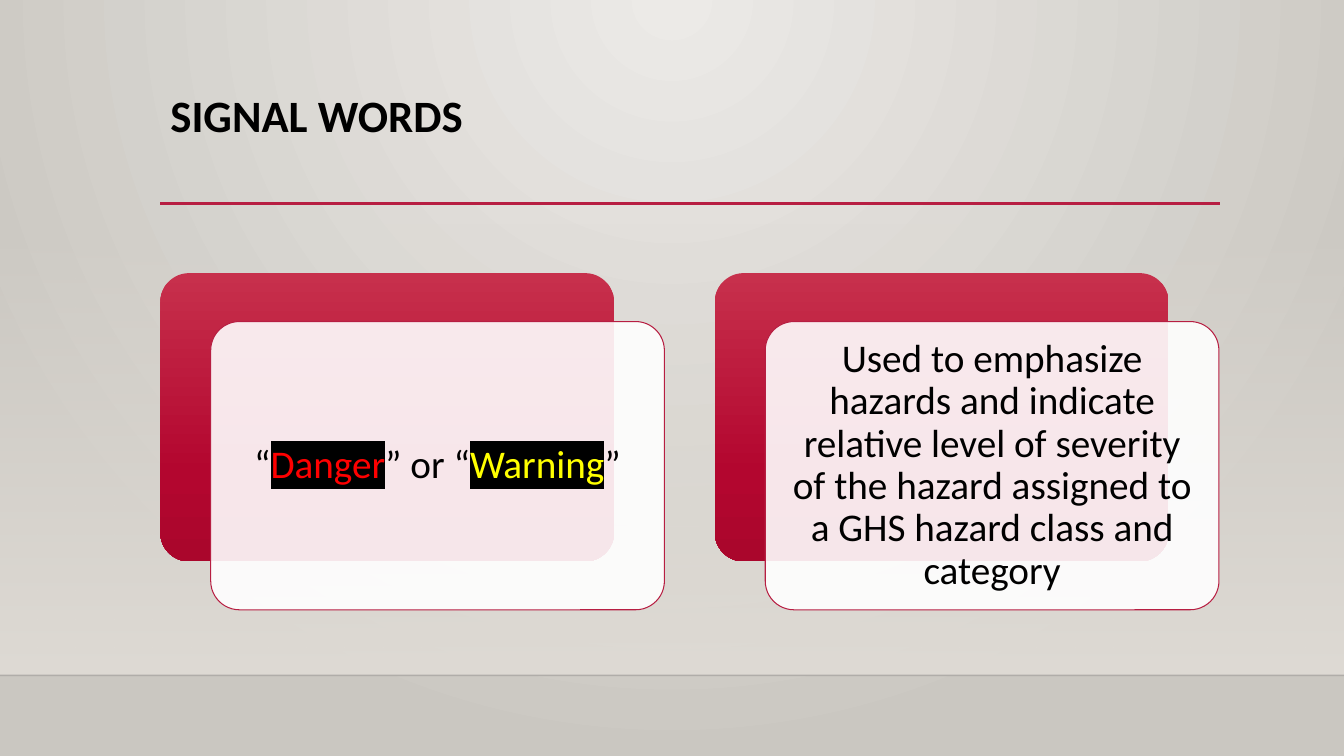
from dataclasses import dataclass

from lxml import etree
from pptx import Presentation
from pptx.dml.color import RGBColor
from pptx.enum import shapes, text
from pptx.oxml import parse_xml
from pptx.oxml.ns import nsdecls, qn
from pptx.util import Inches, Pt


@dataclass(frozen=True)
class Theme:
    font: str = "Calibri"
    title_size: int = 32
    body_size: int = 28
    ink: str = "000000"
    danger: str = "FF0000"
    warning: str = "FFFF00"
    accent: str = "B71E42"
    panel: str = "FFFFFF"
    horizon: str = "000001"
    backdrop: tuple = ((0, "ECEAE7", 100), (100, "CAC7C1", 100))
    wall: tuple = ((0, "DFDBD5", 0), (100, "DFDBD5", 100))
    card: tuple = ((0, "C7304C", 100), (69, "B3062F", 100), (100, "AA062C", 100))


THEME = Theme()

TITLE = [("SIGNAL WORDS", THEME.ink, None)]
CARDS = [
    [
        ("“", THEME.ink, None),
        ("Danger", THEME.danger, THEME.ink),
        ("” or “", THEME.ink, None),
        ("Warning", THEME.warning, THEME.ink),
        ("”", THEME.ink, None),
    ],
    [
        (
            "Used to emphasize hazards and indicate relative level of severity "
            "of the hazard assigned to a GHS hazard class and category",
            THEME.ink,
            None,
        )
    ],
]

WIDTH, HEIGHT = 13.33, 7.5
LEFT, RIGHT = 1.59, 12.1
RULE_Y, HORIZON_Y, WALL_TOP = 2.02, 6.7, 2.21
CARD_TOP, CARD_WIDTH, CARD_HEIGHT = 2.71, 4.5, 2.86
CARD_STEP, PANEL_DX, PANEL_DY = 5.5, 0.5, 0.48
CORNER = 0.1

LINEAR = '<a:lin ang="5400000" scaled="0"/>'
RADIAL = (
    '<a:path path="circle">'
    '<a:fillToRect l="43000" t="0" r="43000" b="100000"/></a:path>'
)


def set_alpha(color, percent):
    etree.SubElement(color, qn("a:alpha")).set("val", str(percent * 1000))


def set_gradient(fill, owner, stops, direction=LINEAR):
    fill.gradient()
    gradient = parse_xml(
        f'<a:gradFill {nsdecls("a")} rotWithShape="1"><a:gsLst>'
        + "".join(
            f'<a:gs pos="{pos * 1000}"><a:srgbClr val="{color}">'
            f'<a:alpha val="{alpha * 1000}"/></a:srgbClr></a:gs>'
            for pos, color, alpha in stops
        )
        + f"</a:gsLst>{direction}</a:gradFill>"
    )
    default = next(owner.iter(qn("a:gradFill")))
    default.getparent().replace(default, gradient)


def write(frame, runs, size, bold=False, align=text.PP_ALIGN.LEFT,
          anchor=text.MSO_ANCHOR.TOP, margins=(0.1, 0.05)):
    frame.word_wrap = True
    frame.auto_size = text.MSO_AUTO_SIZE.NONE
    frame.vertical_anchor = anchor
    frame.margin_left = frame.margin_right = Inches(margins[0])
    frame.margin_top = frame.margin_bottom = Inches(margins[1])
    paragraph = frame.paragraphs[0]
    paragraph.alignment = align
    paragraph.line_spacing = 0.9
    for words, color, highlight in runs:
        run = paragraph.add_run()
        run.text = words
        run.font.name = THEME.font
        run.font.size = Pt(size)
        run.font.bold = bold
        run.font.color.rgb = RGBColor.from_string(color)
        if highlight:
            mark = parse_xml(
                f'<a:highlight {nsdecls("a")}>'
                f'<a:srgbClr val="{highlight}"/></a:highlight>'
            )
            next(run.font.fill._xPr.iter(qn("a:solidFill"))).addnext(mark)


def add_block(slide, kind, left, top, width, height):
    block = slide.shapes.add_shape(
        kind, Inches(left), Inches(top), Inches(width), Inches(height)
    )
    block.shadow.inherit = False
    block.line.fill.background()
    if kind == shapes.MSO_SHAPE.ROUNDED_RECTANGLE:
        block.adjustments[0] = CORNER
    return block


def add_rule(slide, start, end, y, color, weight, alpha=100):
    rule = slide.shapes.add_connector(
        shapes.MSO_CONNECTOR.STRAIGHT, Inches(start), Inches(y), Inches(end), Inches(y)
    )
    rule.line.color.rgb = RGBColor.from_string(color)
    rule.line.width = Pt(weight)
    properties = rule.element.spPr
    set_alpha(next(properties.iter(qn("a:srgbClr"))), alpha)
    etree.SubElement(properties, qn("a:effectLst"))


def add_card(slide, left, runs):
    rounded = shapes.MSO_SHAPE.ROUNDED_RECTANGLE
    back = add_block(slide, rounded, left, CARD_TOP, CARD_WIDTH, CARD_HEIGHT)
    set_gradient(back.fill, back.element.spPr, THEME.card)
    panel = add_block(slide, rounded, left + PANEL_DX, CARD_TOP + PANEL_DY,
                      CARD_WIDTH, CARD_HEIGHT)
    panel.fill.solid()
    panel.fill.fore_color.rgb = RGBColor.from_string(THEME.panel)
    set_alpha(next(panel.element.spPr.iter(qn("a:srgbClr"))), 90)
    panel.line.color.rgb = RGBColor.from_string(THEME.accent)
    panel.line.width = Pt(0.75)
    write(panel.text_frame, runs, THEME.body_size, align=text.PP_ALIGN.CENTER,
          anchor=text.MSO_ANCHOR.MIDDLE, margins=(0.12, 0.12))


def main():
    deck = Presentation()
    deck.slide_width, deck.slide_height = Inches(WIDTH), Inches(HEIGHT)
    slide = deck.slides.add_slide(deck.slide_layouts[5])
    set_gradient(slide.background.fill, slide.element, THEME.backdrop, RADIAL)

    wall = add_block(slide, shapes.MSO_SHAPE.RECTANGLE, 0, WALL_TOP,
                     WIDTH, HORIZON_Y - WALL_TOP)
    set_gradient(wall.fill, wall.element.spPr, THEME.wall)
    add_rule(slide, 0, WIDTH, HORIZON_Y, THEME.horizon, 1, alpha=20)
    add_rule(slide, LEFT, RIGHT, RULE_Y, THEME.accent, 2.5)

    title = slide.shapes.title
    title.left, title.top = Inches(LEFT), Inches(0.88)
    title.width, title.height = Inches(10.5), Inches(1.15)
    write(title.text_frame, TITLE, THEME.title_size, bold=True)

    for index, runs in enumerate(CARDS):
        add_card(slide, LEFT + index * CARD_STEP, runs)

    deck.save("out.pptx")


if __name__ == "__main__":
    main()
